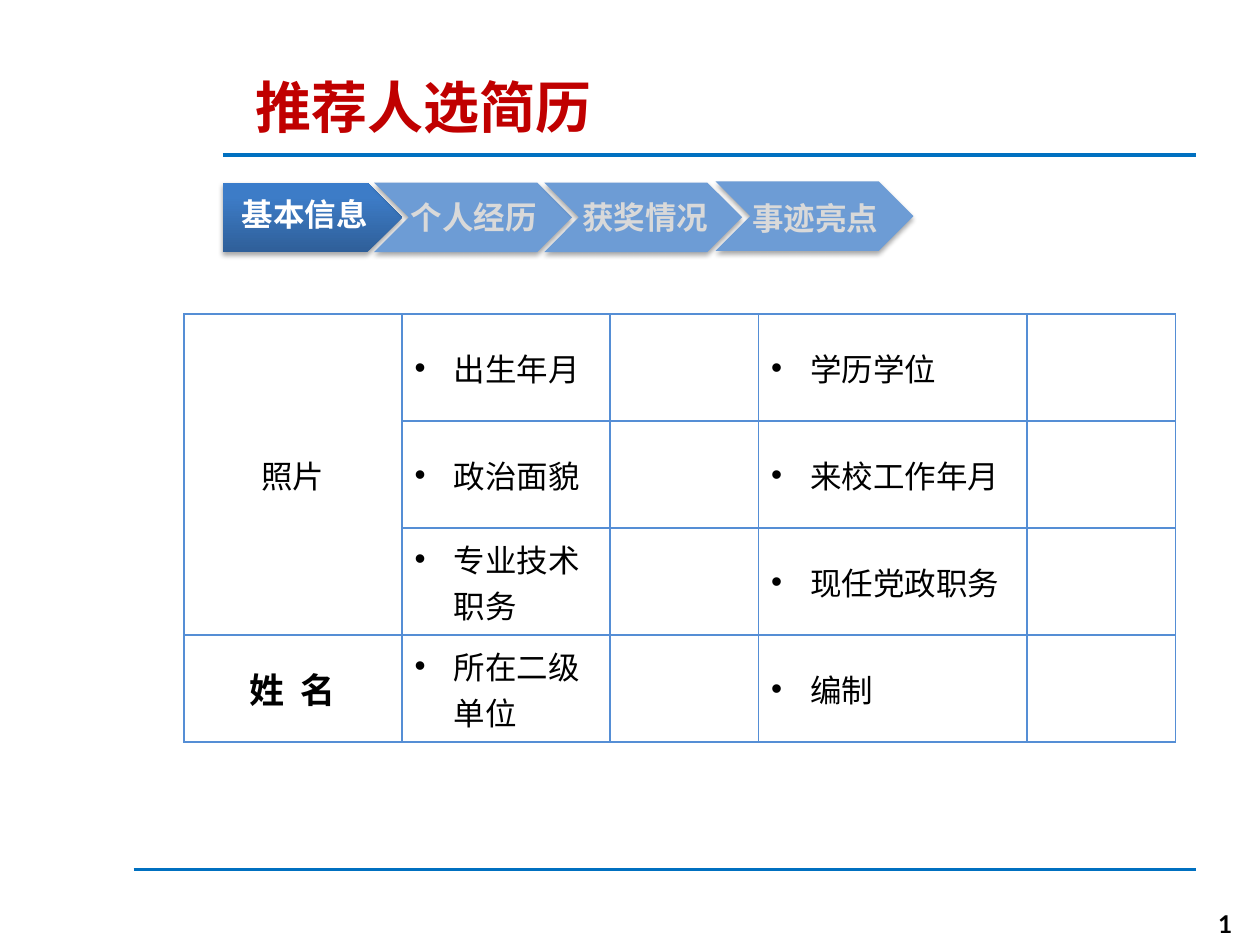
from copy import deepcopy
from lxml import etree
from pptx import Presentation
from pptx.dml.color import RGBColor
from pptx.enum.shapes import MSO_CONNECTOR, MSO_SHAPE
from pptx.enum.text import MSO_ANCHOR, PP_ALIGN
from pptx.oxml import parse_xml
from pptx.oxml.ns import nsdecls, qn
from pptx.util import Inches, Pt

BLACK = RGBColor(0x00, 0x00, 0x00)
WHITE = RGBColor(0xFF, 0xFF, 0xFF)
GREY = RGBColor(0xD9, 0xD9, 0xD9)
RED = RGBColor(0xC0, 0x00, 0x00)
RULE = RGBColor(0x00, 0x70, 0xC0)
STEP = RGBColor(0x6D, 0x9C, 0xD5)
GRADIENT = [(0, RGBColor(0x2F, 0x5F, 0x99)), (0.8, RGBColor(0x3D, 0x7C, 0xC7)),
            (1, RGBColor(0x3A, 0x7C, 0xCB))]
BORDER = RGBColor(0x55, 0x8E, 0xD5)
CJK = "Noto Sans CJK SC"


def write(tf, text, color, size=18, name="Arial", bold=True, align=PP_ALIGN.LEFT, bullet=False):
    p = tf.paragraphs[0]
    p.alignment = align
    if bullet:
        pPr = p._p.get_or_add_pPr()
        pPr.set("marL", str(Inches(0.31)))
        pPr.set("indent", str(-Inches(0.31)))
        etree.SubElement(pPr, qn("a:buFont")).set("typeface", "Arial")
        etree.SubElement(pPr, qn("a:buChar")).set("char", "•")
    r = p.add_run()
    r.text = text
    for key, value in {"size": Pt(size), "name": name, "bold": bold}.items():
        setattr(r.font, key, value)
    r.font.color.rgb = color
    etree.SubElement(r._r.get_or_add_rPr(), qn("a:ea")).set("typeface", CJK)


def add_text(x, y, w, h, text, color, **fmt):
    tf = s.shapes.add_textbox(Inches(x), Inches(y), Inches(w), Inches(h)).text_frame
    tf.word_wrap = True
    tf.vertical_anchor = MSO_ANCHOR.MIDDLE
    write(tf, text, color, **fmt)


prs = Presentation()
prs.slide_width, prs.slide_height = Inches(10), Inches(7.5)
s = prs.slides.add_slide(prs.slide_layouts[6])

for x, y in [(1.77, 1.23), (1.06, 6.9)]:
    line = s.shapes.add_connector(MSO_CONNECTOR.STRAIGHT, Inches(x), Inches(y), Inches(9.49), Inches(y))
    line.line.color.rgb = RULE
    line.line.width = Pt(2)
    etree.SubElement(line._element.spPr, qn("a:effectLst"))

add_text(1.93, 0.52, 7.72, 0.64, "推荐人选简历", RED, size=32)
add_text(7.55, 7.13, 2.33, 0.4, "1", BLACK, size=14, name="Lato", align=PP_ALIGN.RIGHT)

steps = [
    ("基本信息", 1.77, 1.45, 1.42, 1.75, 1.5),
    ("个人经历", 2.97, 1.45, 1.57, 3.09, 1.52),
    ("获奖情况", 4.32, 1.45, 1.57, 4.45, 1.52),
    ("事迹亮点", 5.68, 1.44, 1.57, 5.8, 1.53),
]
for i, (label, x, y, w, label_x, label_y) in enumerate(steps):
    kind = MSO_SHAPE.CHEVRON if i else MSO_SHAPE.PENTAGON
    sp = s.shapes.add_shape(kind, Inches(x), Inches(y), Inches(w), Inches(0.55))
    sp.line.fill.background()
    if i:
        sp.fill.solid()
        sp.fill.fore_color.rgb = STEP
    else:
        sp.fill.gradient()
        sp.fill.gradient_angle = 90
        stop = sp._element.spPr.find(".//" + qn("a:gs"))
        stop.addnext(deepcopy(stop))
        for stop, (position, color) in zip(sp.fill.gradient_stops, GRADIENT):
            stop.position = position
            stop.color.rgb = color
    sp.shadow.inherit = False
    sp._element.spPr.find(qn("a:effectLst")).append(parse_xml(
        f'<a:outerShdw {nsdecls("a")} blurRad="{Pt(3.1)}" dist="{Pt(1.8)}" dir="5400000" rotWithShape="0">'
        '<a:srgbClr val="000000"><a:alpha val="35000"/></a:srgbClr></a:outerShdw>'))
    add_text(label_x, label_y, 1.34, 0.4, label, GREY if i else WHITE,
             name="Arial" if i else CJK, align=PP_ALIGN.CENTER)

rows = [
    ("照片", "出生年月", "", "学历学位", ""),
    ("", "政治面貌", "", "来校工作年月", ""),
    ("", "专业技术职务", "", "现任党政职务", ""),
    ("姓  名", "所在二级单位", "", "编制", ""),
]
table = s.shapes.add_table(4, 5, Inches(1.46), Inches(2.49), Inches(7.87), Inches(3.39)).table
table.first_row = table.horz_banding = False
for col, width in zip(table.columns, [1.73, 1.65, 1.18, 2.13, 1.18]):
    col.width = Inches(width)
for row in table.rows:
    row.height = Inches(0.85)
table.cell(0, 0).merge(table.cell(2, 0))

for i, row in enumerate(rows):
    for j, text in enumerate(row):
        cell = table.cell(i, j)
        cell.vertical_anchor = MSO_ANCHOR.MIDDLE
        for side in ("lnL", "lnR", "lnT", "lnB"):
            cell._tc.get_or_add_tcPr().append(parse_xml(
                f'<a:{side} {nsdecls("a")} w="{Pt(1)}"><a:solidFill>'
                f'<a:srgbClr val="{BORDER}"/></a:solidFill></a:{side}>'))
        cell.fill.background()
        if text and j:
            write(cell.text_frame, text, BLACK, bold=False, bullet=True)
        elif text:
            write(cell.text_frame, text, BLACK, size=20 if i else 18, name="Calibri",
                  bold=i > 0, align=PP_ALIGN.CENTER)

prs.save("out.pptx")
